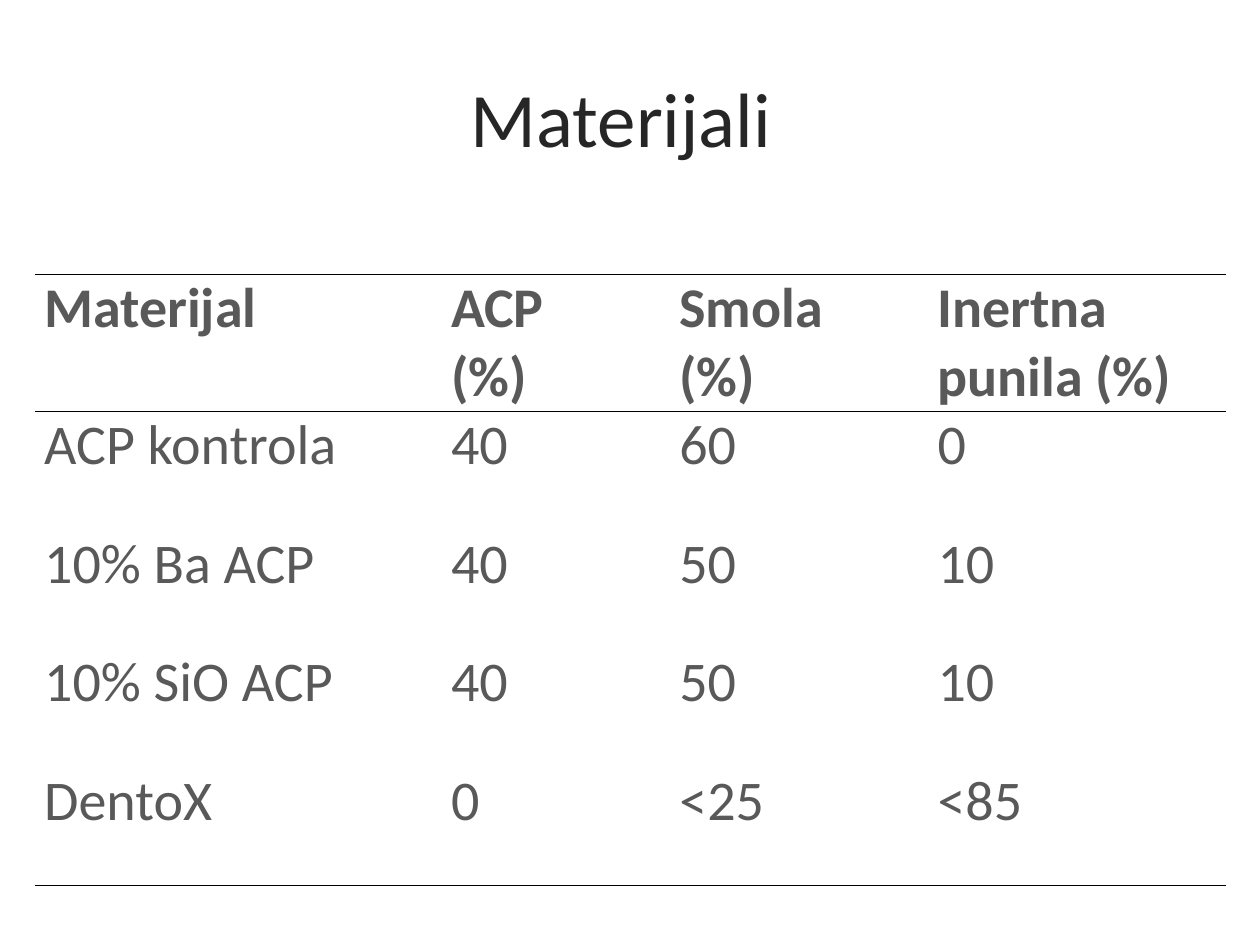
from lxml import etree
from pptx import Presentation
from pptx import util as u
from pptx.dml.color import RGBColor
from pptx.enum import text
from pptx.oxml import ns

TITLE_COLOR = RGBColor(0x26, 0x26, 0x26)
TEXT_COLOR = RGBColor(0x59, 0x59, 0x59)
RULE_COLOR = RGBColor(0, 0, 0)

TITLE_FONT = {"name": "Calibri", "size": u.Pt(44), "bold": False}
BODY_FONT = {"name": "Calibri", "size": u.Pt(32), "bold": False}
HEADER_FONT = {**BODY_FONT, "bold": True}
CELL_FORMAT = {
    "margin_left": u.Pt(5.25),
    "margin_right": u.Pt(5.25),
    "margin_top": 0,
    "margin_bottom": 0,
    "vertical_anchor": text.MSO_ANCHOR.TOP,
}

COLUMN_WIDTHS = [232.5, 130.5, 147.5, 170]
ROW_HEIGHTS = [70] + [67.75] * 4
MATERIALS = [
    ["Materijal", "ACP\n(%)", "Smola\n(%)", "Inertna punila (%)"],
    ["ACP kontrola", "40", "60", "0"],
    ["10% Ba ACP", "40", "50", "10"],
    ["10% SiO ACP", "40", "50", "10"],
    ["DentoX", "0", "<25", "<85"],
]
LEFT_ALIGNED = {"Inertna punila (%)", "10% Ba ACP"}


def set_attributes(target, values):
    for name, value in values.items():
        setattr(target, name, value)


def format_paragraph(paragraph, font, color, alignment):
    paragraph.alignment = alignment
    set_attributes(paragraph.font, font)
    paragraph.font.color.rgb = color


def add_title(slide, wording):
    title = slide.shapes.title
    set_attributes(title, {
        "left": u.Pt(36), "top": u.Pt(21.6),
        "width": u.Pt(648), "height": u.Pt(90),
    })
    frame = title.text_frame
    frame.text = wording
    frame.vertical_anchor = text.MSO_ANCHOR.MIDDLE
    format_paragraph(frame.paragraphs[0], TITLE_FONT, TITLE_COLOR,
                     text.PP_ALIGN.CENTER)


def set_borders(cell, ruled_sides):
    properties = cell._tc.get_or_add_tcPr()
    for side in "LRTB":
        line = etree.SubElement(properties, ns.qn(f"a:ln{side}"),
                                w=str(u.Pt(1)))
        if side in ruled_sides:
            fill = etree.SubElement(line, ns.qn("a:solidFill"))
            etree.SubElement(fill, ns.qn("a:srgbClr"), val=str(RULE_COLOR))
        else:
            etree.SubElement(line, ns.qn("a:noFill"))


def fill_cell(cell, wording, font, ruled_sides):
    set_attributes(cell, CELL_FORMAT)
    set_borders(cell, ruled_sides)
    cell.fill.background()
    cell.text_frame.text = wording
    alignment = (text.PP_ALIGN.LEFT if wording in LEFT_ALIGNED
                 else text.PP_ALIGN.JUSTIFY)
    for paragraph in cell.text_frame.paragraphs:
        format_paragraph(paragraph, font, TEXT_COLOR, alignment)


def add_materials_table(slide):
    table = slide.shapes.add_table(
        len(ROW_HEIGHTS), len(COLUMN_WIDTHS), u.Pt(20), u.Pt(156.75),
        u.Pt(sum(COLUMN_WIDTHS)), u.Pt(sum(ROW_HEIGHTS))).table
    set_attributes(table, {"first_row": False, "horz_banding": False})
    for column, width in zip(table.columns, COLUMN_WIDTHS):
        column.width = u.Pt(width)
    for row, height in zip(table.rows, ROW_HEIGHTS):
        row.height = u.Pt(height)
    ruled_sides = {0: "TB", 1: "T", len(MATERIALS) - 1: "B"}
    for index, values in enumerate(MATERIALS):
        font = HEADER_FONT if index == 0 else BODY_FONT
        for cell, wording in zip(table.rows[index].cells, values):
            fill_cell(cell, wording, font, ruled_sides.get(index, ""))


def main():
    presentation = Presentation()
    set_attributes(presentation, {
        "slide_width": u.Pt(720), "slide_height": u.Pt(540),
    })
    slide = presentation.slides.add_slide(presentation.slide_layouts[5])
    add_title(slide, "Materijali ")
    add_materials_table(slide)
    presentation.save("out.pptx")


if __name__ == "__main__":
    main()
